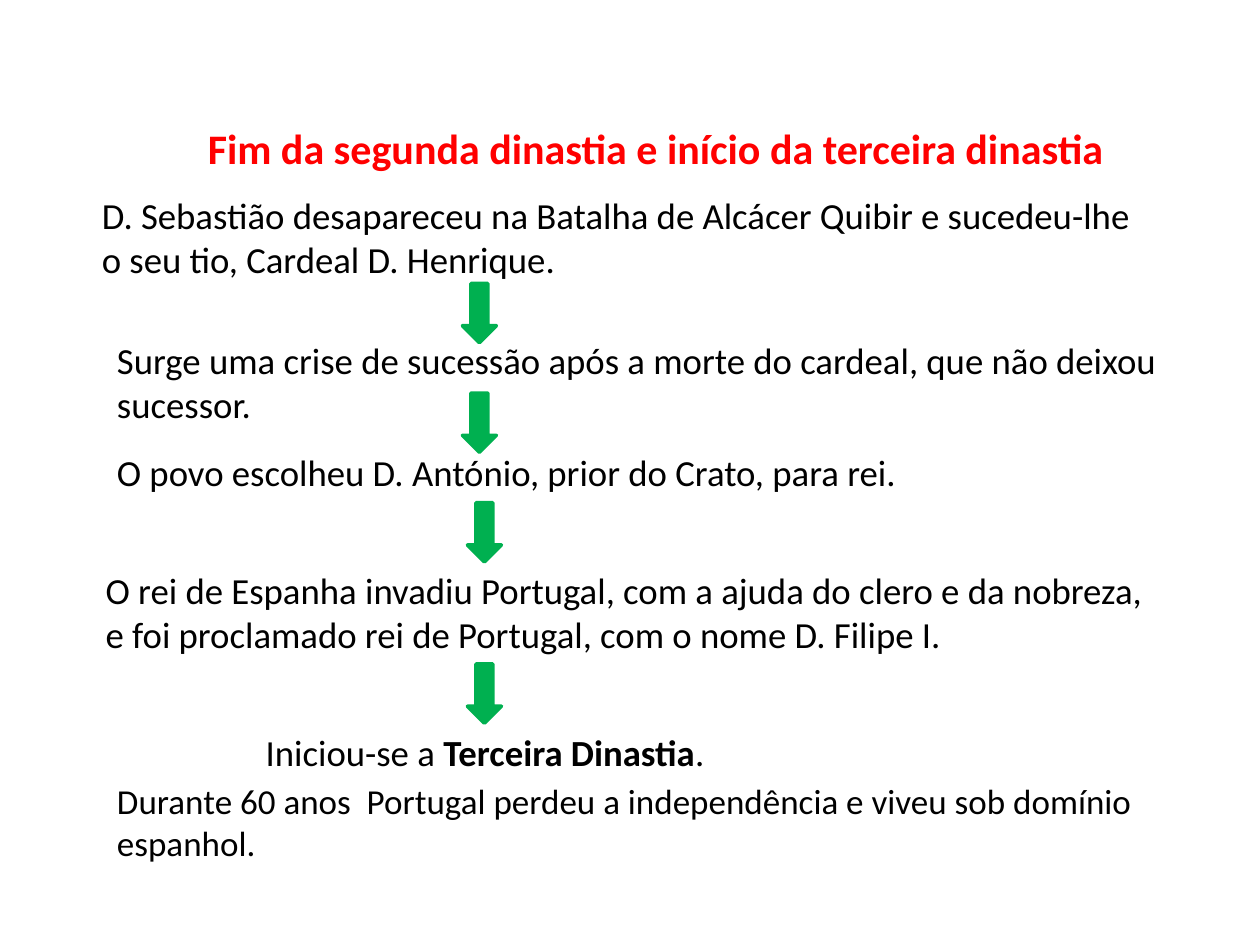
from dataclasses import dataclass

from pptx import Presentation
from pptx.dml.color import RGBColor
from pptx.enum.shapes import MSO_SHAPE
from pptx.enum.text import MSO_AUTO_SIZE, PP_ALIGN
from pptx.util import Inches, Pt


@dataclass(frozen=True)
class Theme:
    """Colours, font and type sizes of the slide."""
    font: str = "Calibri"
    title: RGBColor = RGBColor(0xFF, 0x00, 0x00)
    body: RGBColor = RGBColor(0x00, 0x00, 0x00)
    arrow: RGBColor = RGBColor(0x00, 0xB0, 0x50)
    title_size: int = 24
    body_size: int = 21
    note_size: int = 20
    arrow_line: int = 2


THEME = Theme()

EVENTS = [
    ((0.71, 1.48, 8.74, 0.81),
     [["D. Sebastião desapareceu na Batalha de Alcácer Quibir e sucedeu-lhe"],
      ["o seu tio, Cardeal D. Henrique."]]),
    ((0.83, 2.63, 8.58, 0.81),
     [["Surge uma crise de sucessão após a morte do cardeal, "
       "que não deixou sucessor."]]),
    ((0.83, 3.52, 8.16, 0.45),
     [["O povo escolheu D. António, prior do Crato, para rei."]]),
    ((0.74, 4.46, 8.58, 0.81),
     [["O rei de Espanha invadiu Portugal, com a ajuda do clero e da nobreza, "
       "e foi proclamado rei de Portugal, com o nome D. Filipe I."]]),
    ((2.01, 5.74, 3.86, 0.45),
     [["Iniciou-se a ", "Terceira Dinastia", "."]]),
]
ARROWS = [(3.67, 2.25), (3.67, 3.12), (3.71, 3.99), (3.71, 5.27)]
ARROW_SIZE = (0.27, 0.47)


def add_text(slide, box, paragraphs, size, color):
    """Add a wrapping text box, with every second run bold, and return its paragraphs."""
    tf = slide.shapes.add_textbox(*map(Inches, box)).text_frame
    tf.word_wrap = True
    tf.auto_size = MSO_AUTO_SIZE.SHAPE_TO_FIT_TEXT
    for i, runs in enumerate(paragraphs):
        p = tf.add_paragraph() if i else tf.paragraphs[0]
        p.font.name = THEME.font
        p.font.size = Pt(size)
        p.font.color.rgb = color
        for j, text in enumerate(runs):
            r = p.add_run()
            r.text = text
            if j % 2:
                r.font.bold = True
    return tf.paragraphs


def add_title(slide, box):
    """Add the centred heading."""
    text = "Fim da segunda dinastia e início da terceira dinastia"
    p = add_text(slide, box, [[text]], THEME.title_size, THEME.title)[0]
    p.alignment = PP_ALIGN.CENTER
    p.font.bold = True


def add_arrow(slide, box):
    """Add a green down arrow between two events."""
    sp = slide.shapes.add_shape(MSO_SHAPE.DOWN_ARROW, *map(Inches, box))
    sp.shadow.inherit = False
    sp.fill.solid()
    sp.fill.fore_color.rgb = THEME.arrow
    sp.line.color.rgb = THEME.arrow
    sp.line.width = Pt(THEME.arrow_line)


def add_note(slide, box):
    """Add the closing remark."""
    text = ("Durante 60 anos  Portugal perdeu a independência "
            "e viveu sob domínio espanhol.")
    p = add_text(slide, box, [[text]], THEME.note_size, THEME.body)[0]
    p.space_after = Pt(6)


def main():
    """Build the slide and save it."""
    prs = Presentation()
    prs.slide_width, prs.slide_height = Inches(10), Inches(7.5)
    slide = prs.slides.add_slide(prs.slide_layouts[6])
    add_title(slide, (1.44, 0.92, 7.53, 0.5))
    for box, paragraphs in EVENTS:
        add_text(slide, box, paragraphs, THEME.body_size, THEME.body)
    for position in ARROWS:
        add_arrow(slide, position + ARROW_SIZE)
    add_note(slide, (0.83, 6.14, 8.35, 0.77))
    prs.save("out.pptx")


if __name__ == "__main__":
    main()
